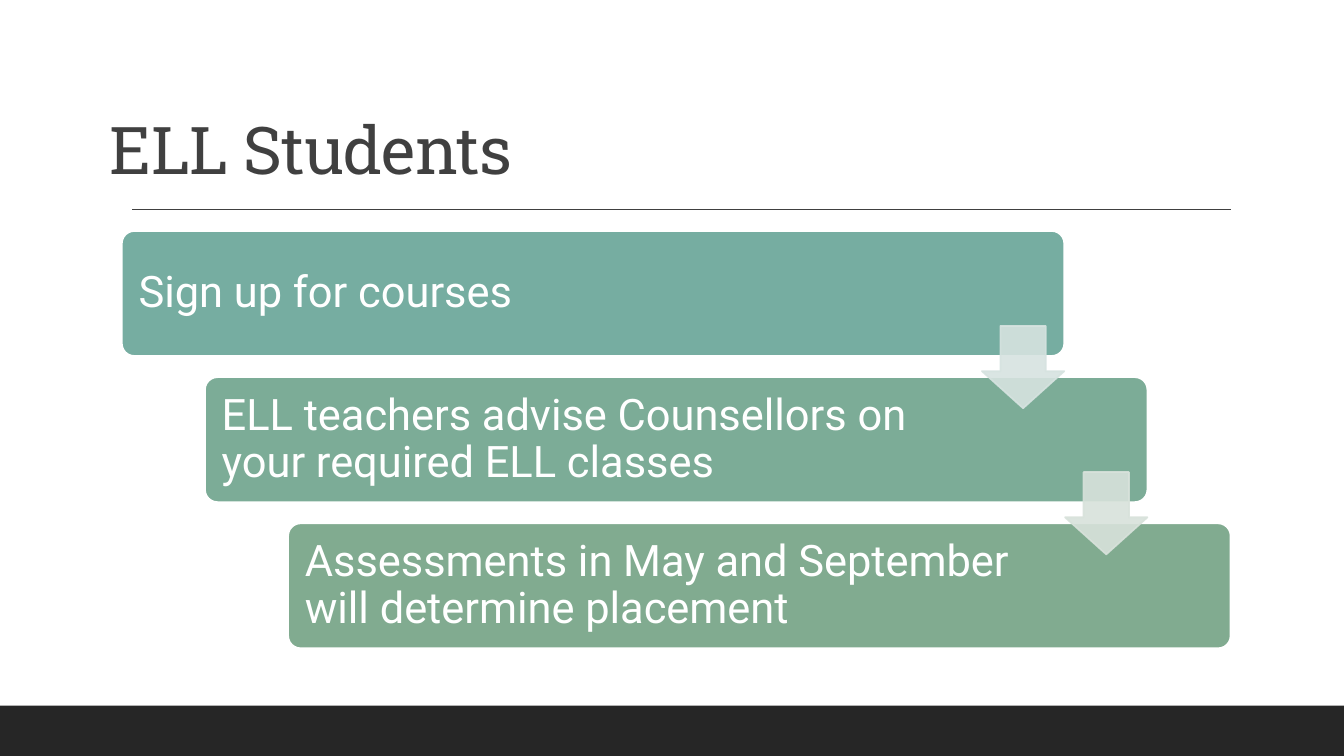
from pptx import Presentation
from pptx import util as u
from pptx.dml.color import RGBColor
from pptx.enum import shapes, text
from pptx.oxml import ns
from lxml import etree


def rgb(value):
    return RGBColor.from_string(value)


def write(tf, content, font="Roboto", size=31, color="FFFFFF", spacing=None,
          anchor=text.MSO_ANCHOR.MIDDLE):
    tf.word_wrap = True
    tf.auto_size = text.MSO_AUTO_SIZE.NONE
    tf.vertical_anchor = anchor
    p = tf.paragraphs[0]
    p.alignment = text.PP_ALIGN.LEFT
    p.line_spacing = 0.9
    r = p.add_run()
    r.text = content
    r.font.name = font
    r.font.size = u.Pt(size)
    r.font.color.rgb = rgb(color)
    if spacing is not None:
        r.font._element.set("spc", str(round(spacing * 100)))


class Deck:
    COLS, ROWS = 160, 90
    DARK, INK, WHITE = "262626", "404040", "FFFFFF"
    INSET, RIGHT_INSET = 0.13, 1.76

    def __init__(self):
        self.prs = Presentation()
        self.prs.slide_width = u.Inches(13.33)
        self.prs.slide_height = u.Inches(7.5)
        self.s = self.prs.slides.add_slide(self.prs.slide_layouts[5])

    def x(self, cols):
        return round(self.prs.slide_width * cols / self.COLS)

    def y(self, rows):
        return round(self.prs.slide_height * rows / self.ROWS)

    def box(self, left, top, width, height):
        return self.x(left), self.y(top), self.x(width), self.y(height)

    def title(self, content, *at):
        sp = self.s.shapes.title
        sp.left, sp.top, sp.width, sp.height = self.box(*at)
        write(sp.text_frame, content, font="Roboto Slab", size=47,
              color=self.INK, spacing=-0.5, anchor=text.MSO_ANCHOR.BOTTOM)

    def shape(self, kind, at, fill, line=None, adjust=()):
        sp = self.s.shapes.add_shape(kind, *self.box(*at))
        sp.shadow.inherit = False
        sp.fill.solid()
        sp.fill.fore_color.rgb = rgb(fill)
        if line:
            sp.line.color.rgb = rgb(line)
            sp.line.width = u.Pt(1.25)
        else:
            sp.line.fill.background()
        for i, value in enumerate(adjust):
            sp.adjustments[i] = value
        return sp

    def rule(self, left, right, row):
        c = self.s.shapes.add_connector(
            shapes.MSO_CONNECTOR.STRAIGHT,
            self.x(left), self.y(row), self.x(right), self.y(row))
        c.line.color.rgb = rgb(self.INK)
        c.line.width = u.Pt(1)
        etree.SubElement(c._element.spPr, ns.qn("a:effectLst"))

    def step(self, content, at, fill):
        sp = self.shape(shapes.MSO_SHAPE.ROUNDED_RECTANGLE, at, fill,
                        self.WHITE, [0.1])
        tf = sp.text_frame
        tf.margin_left = tf.margin_top = tf.margin_bottom = u.Inches(self.INSET)
        tf.margin_right = u.Inches(self.RIGHT_INSET)
        write(tf, content)

    def arrow(self, at, fill):
        sp = self.shape(shapes.MSO_SHAPE.DOWN_ARROW, at, fill, fill,
                        [0.55, 0.45])
        for clr in sp._element.spPr.iter(ns.qn("a:srgbClr")):
            etree.SubElement(clr, ns.qn("a:alpha"), val="90000")


def main():
    steps = [
        ("Sign up for courses", "76ADA1"),
        ("ELL teachers advise Counsellors on your required ELL classes", "7CAC97"),
        ("Assessments in May and September will determine placement", "81AB90"),
    ]
    arrows = ["D6E3E0", "D8E2DB"]
    dx, dy = 9.9, 17.4

    deck = Deck()
    deck.shape(shapes.MSO_SHAPE.RECTANGLE, (0, 84, 160, 6), deck.DARK)
    deck.rule(15.72, 146.52, 24.96)
    deck.title("ELL Students", 11.88, 3.96, 132, 19.08)
    for i, (content, fill) in enumerate(steps):
        deck.step(content, (14.5 + i * dx, 27.5 + i * dy, 112.2, 14.88), fill)
    for i, fill in enumerate(arrows):
        deck.arrow((116.9 + i * dx, 38.8 + i * dy, 9.8, 9.8), fill)
    deck.prs.save("out.pptx")


if __name__ == "__main__":
    main()
